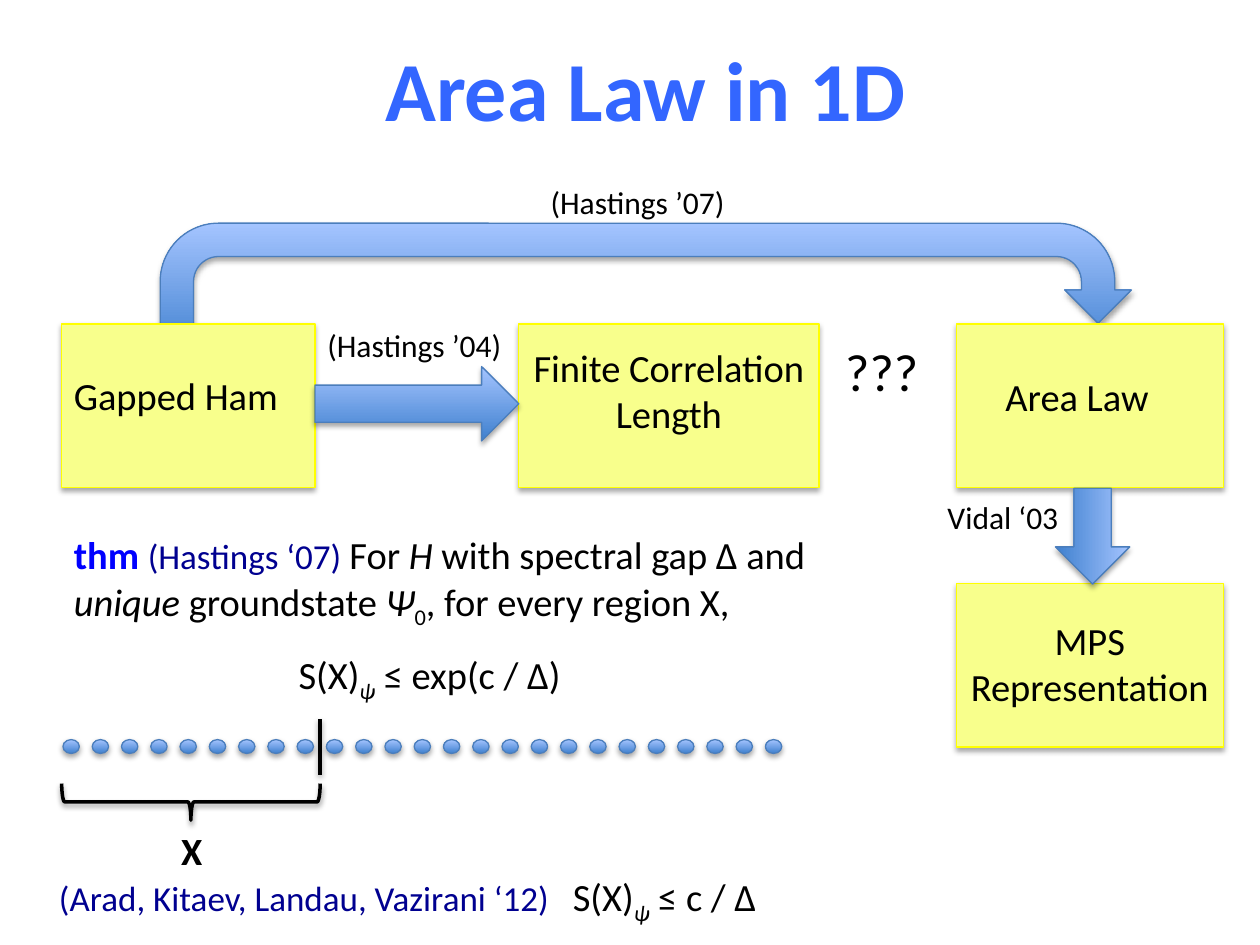
"""Build the Area Law in 1D slide."""
import pptx
import pptx.dml.color
import pptx.enum.shapes
import pptx.enum.text
import pptx.oxml.ns
import pptx.util
from lxml import etree

Cm = pptx.util.Cm
Pt = pptx.util.Pt
RGBColor = pptx.dml.color.RGBColor
SHAPE = pptx.enum.shapes.MSO_SHAPE
ALIGN = pptx.enum.text.PP_ALIGN
ANCHOR = pptx.enum.text.MSO_ANCHOR
qn = pptx.oxml.ns.qn

BLACK = RGBColor(0x00, 0x00, 0x00)
TITLE_BLUE = RGBColor(0x33, 0x66, 0xFF)
THEOREM_BLUE = RGBColor(0x00, 0x00, 0xFF)
CITATION_BLUE = RGBColor(0x00, 0x00, 0x90)
BOX_FILL = RGBColor(0xF8, 0xFF, 0x8C)
BOX_LINE = RGBColor(0xFF, 0xFF, 0x00)
GRADIENT_DARK = RGBColor(0x3F, 0x80, 0xCE)
GRADIENT_LIGHT = RGBColor(0xA4, 0xC4, 0xFF)
GRADIENT_LINE = RGBColor(0x4B, 0x7E, 0xBC)

BODY = {"size": Pt(22)}
ITALIC = {"size": Pt(22), "italic": True}
BOLD = {"size": Pt(22), "bold": True}
SMALL = {"size": Pt(18)}
LARGE = {"size": Pt(30)}
TITLE = {"size": Pt(48), "bold": True, "color": TITLE_BLUE}
THEOREM = {**BOLD, "color": THEOREM_BLUE}
CITATION = {"size": Pt(20), "color": CITATION_BLUE}
SUBSCRIPT = {**BODY, "baseline": -25000}
ITALIC_SUBSCRIPT = {**ITALIC, "baseline": -25000}


class SlideBuilder:
    """Hold the style and the current slide, and draw each kind of element."""

    font_name = "Calibri"
    thin = Pt(0.75)
    thick = Pt(2)

    def __init__(self, slide):
        self.slide = slide

    def shadow(self, shape, opacity=35, distance=1.8):
        effects = etree.SubElement(shape._element.spPr, qn("a:effectLst"))
        outer = etree.SubElement(effects, qn("a:outerShdw"), blurRad=str(Pt(3.1)),
                                 dist=str(Pt(distance)), dir="5400000", rotWithShape="0")
        color = etree.SubElement(outer, qn("a:srgbClr"), val=str(BLACK))
        etree.SubElement(color, qn("a:alpha"), val=str(opacity * 1000))

    def outline(self, shape, color, width):
        for name, value in {"width": width}.items():
            setattr(shape.line, name, value)
        shape.line.color.rgb = color

    def shape(self, kind, place, rotation=0):
        shape = self.slide.shapes.add_shape(kind, *map(Cm, place))
        shape.rotation = rotation
        return shape

    def box(self, *place):
        shape = self.shape(SHAPE.RECTANGLE, place)
        shape.fill.solid()
        shape.fill.fore_color.rgb = BOX_FILL
        self.outline(shape, BOX_LINE, self.thin)
        self.shadow(shape)

    def gradient(self, kind, *place, rotation=0):
        shape = self.shape(kind, place, rotation)
        shape.fill.gradient()
        shape.fill.gradient_angle = 90
        for stop, color in zip(shape.fill.gradient_stops, (GRADIENT_DARK, GRADIENT_LIGHT)):
            stop.color.rgb = color
        self.outline(shape, GRADIENT_LINE, self.thin)
        self.shadow(shape)

    def brace(self, *place):
        shape = self.shape(SHAPE.LEFT_BRACE, place, 270)
        shape.fill.background()
        self.outline(shape, BLACK, self.thick)
        self.shadow(shape, 38, 1.6)

    def line(self, *ends):
        connector = self.slide.shapes.add_connector(
            pptx.enum.shapes.MSO_CONNECTOR.STRAIGHT, *map(Cm, ends))
        self.outline(connector, BLACK, self.thick)
        self.shadow(connector, 38, 1.6)

    def text(self, place, *paragraphs, align=ALIGN.LEFT, anchor=ANCHOR.TOP):
        frame = self.slide.shapes.add_textbox(*map(Cm, place)).text_frame
        for name, value in {"word_wrap": True, "vertical_anchor": anchor}.items():
            setattr(frame, name, value)
        for index, runs in enumerate(paragraphs):
            paragraph = frame.add_paragraph() if index else frame.paragraphs[0]
            paragraph.alignment = align
            for words, style in runs:
                self.run(paragraph, words, style)
        return frame.paragraphs

    def run(self, paragraph, words, style):
        run = paragraph.add_run()
        run.text = words
        values = {"name": self.font_name, "color": BLACK, **style}
        run.font.color.rgb = values.pop("color")
        baseline = values.pop("baseline", None)
        for name, value in values.items():
            setattr(run.font, name, value)
        if baseline:
            run._r.get_or_add_rPr().set("baseline", str(baseline))

    def indent(self, paragraph, left, before):
        paragraph.space_before = Pt(before)
        paragraph._p.get_or_add_pPr().set("marL", str(Cm(left)))

    def tab_stop(self, paragraph, position):
        tabs = etree.SubElement(paragraph._p.get_or_add_pPr(), qn("a:tabLst"))
        etree.SubElement(tabs, qn("a:tab"), pos=str(Cm(position)), algn="l")


def entropy_bound(bound):
    return [("S(X)", BODY), ("ψ", ITALIC_SUBSCRIPT), (f" ≤ {bound}", BODY)]


def main():
    presentation = pptx.Presentation()
    presentation.slide_width, presentation.slide_height = Cm(25.4), Cm(19.05)
    builder = SlideBuilder(presentation.slides.add_slide(presentation.slide_layouts[6]))

    builder.gradient(SHAPE.U_TURN_ARROW, 3.23, 4.5, 19.58, 2.69)
    builder.text((0.43, -0.66, 25.17, 4.85), [("Area Law in 1D", TITLE)],
                 align=ALIGN.CENTER, anchor=ANCHOR.MIDDLE)

    for left, top, width in ((10.46, 6.53, 6.05), (1.24, 6.53, 5.11),
                             (19.28, 6.53, 5.38), (19.28, 11.76, 5.38)):
        builder.box(left, top, width, 3.3)
    builder.gradient(SHAPE.RIGHT_ARROW, 6.35, 7.39, 4.11, 1.5)
    builder.gradient(SHAPE.RIGHT_ARROW, 21.06, 10.06, 1.93, 1.5, rotation=90)

    for place, lines in (((10.46, 6.81, 6.05, 2.13), ("Finite Correlation", "Length")),
                         ((19.28, 12.32, 5.38, 2.13), ("MPS", "Representation"))):
        builder.text(place, *([(words, BODY)] for words in lines), align=ALIGN.CENTER)
    for place, words, style in (
            ((1.24, 7.37, 5.08, 1.19), "Gapped Ham", BODY),
            ((20.02, 7.39, 4.34, 1.19), "Area Law", BODY),
            ((16.79, 6.71, 2.46, 1.55), "???", LARGE),
            ((10.85, 3.56, 4.17, 1.02), "(Hastings ’07)", SMALL),
            ((6.35, 6.45, 4.52, 1.02), "(Hastings ’04)", SMALL),
            ((18.85, 9.91, 2.95, 1.02), "Vidal ‘03", SMALL),
            ((3.4, 16.54, 1.14, 1.19), "X", BOLD)):
        builder.text(place, [(words, style)])

    theorem = builder.text(
        (1.24, 10.59, 16.1, 5.21),
        [("thm ", THEOREM), ("(Hastings ‘07) ", CITATION), ("For ", BODY), ("H", ITALIC),
         (" with spectral gap Δ and ", BODY), ("unique ", ITALIC), ("groundstate ", BODY),
         ("Ψ", ITALIC), ("0", SUBSCRIPT), (", for every region X,", BODY)],
        entropy_bound("exp(c / Δ)"))
    builder.indent(theorem[1], 4.53, 12)

    for site in range(25):
        builder.gradient(SHAPE.OVAL, 1.27 + 0.59 * site, 14.91, 0.33, 0.28)
    builder.line(6.45, 14.5, 6.45, 15.62)
    builder.brace(3.48, 13.56, 0.74, 5.21)

    citation = builder.text(
        (0.94, 17.48, 15.54, 1.19),
        [("(Arad, Kitaev, Landau, Vazirani ‘12)\t", CITATION), *entropy_bound("c / Δ")])
    builder.tab_stop(citation[0], 10.36)

    presentation.save("out.pptx")


if __name__ == "__main__":
    main()
